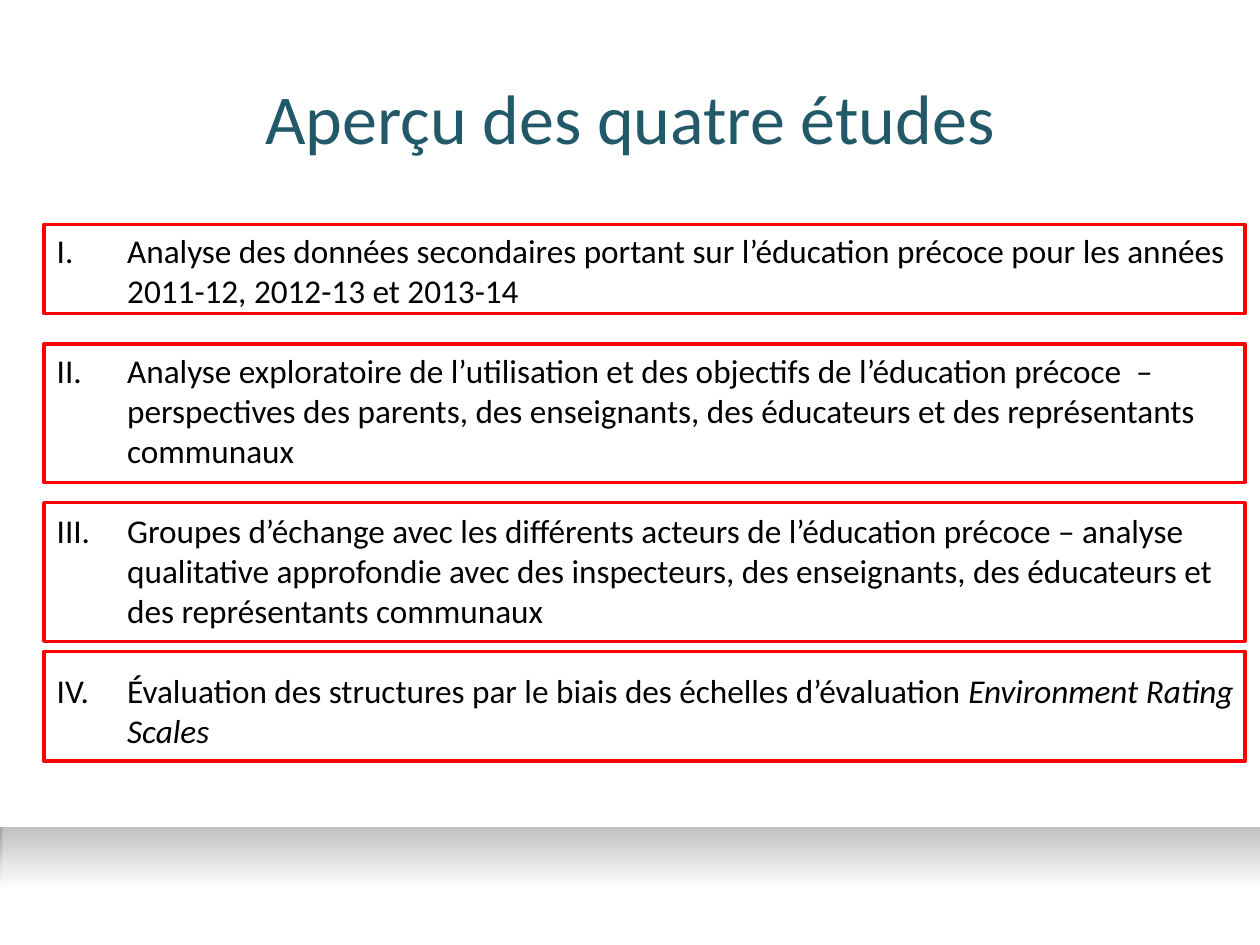
from lxml import etree
from pptx import Presentation
from pptx.dml.color import RGBColor
from pptx.enum.shapes import MSO_SHAPE
from pptx.enum.text import MSO_ANCHOR, MSO_AUTO_SIZE, PP_ALIGN
from pptx.oxml.ns import qn
from pptx.util import Inches, Pt

RECTANGLE = MSO_SHAPE.RECTANGLE
MIDDLE, TOP = MSO_ANCHOR.MIDDLE, MSO_ANCHOR.TOP
CENTER, LEFT = PP_ALIGN.CENTER, PP_ALIGN.LEFT
NO_AUTOFIT = MSO_AUTO_SIZE.NONE

# Each study: plain text, italic ending, top and height of its frame
STUDIES = [
    ("Analyse des données secondaires portant sur l’éducation précoce pour les "
     "années 2011-12, 2012-13 et 2013-14", "", 1.78, 0.71),
    ("Analyse exploratoire de l’utilisation et des objectifs de l’éducation "
     "précoce \u00a0– perspectives des parents, des enseignants, des éducateurs "
     "et des représentants communaux", "", 2.73, 1.1),
    ("Groupes d’échange avec les différents acteurs de l’éducation précoce – "
     "analyse qualitative approfondie avec des inspecteurs, des enseignants, des "
     "éducateurs et des représentants communaux", "", 3.99, 1.1),
    ("Évaluation des structures par le biais des échelles d’évaluation ",
     "Environment Rating Scales", 5.17, 0.87),
]


def color(hex_code):
    return RGBColor.from_string(hex_code)


def add_rectangle(left, top, width, height):
    """Add a rectangle without shadow."""
    rectangle = slide.shapes.add_shape(
        RECTANGLE, Inches(left), Inches(top), Inches(width), Inches(height))
    rectangle.shadow.inherit = False
    return rectangle


prs = Presentation()
prs.slide_width, prs.slide_height = Inches(10), Inches(7.5)
slide = prs.slides.add_slide(prs.slide_layouts[1])

# Footer band: grey gradient under a translucent white veil
band = add_rectangle(0, 6.56, 10.02, 0.99)
band.line.fill.background()
band.fill.gradient()
band.fill.gradient_angle = 270
for stop, position, shade in zip(
        band.fill.gradient_stops, (0.03, 0.5), ("A6A6A6", "FFFFFF")):
    stop.position = position
    stop.color.rgb = color(shade)

veil = add_rectangle(0.02, 6.56, 10, 0.99)
veil.line.fill.background()
veil.fill.solid()
veil.fill.fore_color.rgb = color("FFFFFF")
veil_color = veil.fill._xPr.find(qn("a:solidFill"))[0]
etree.SubElement(veil_color, qn("a:alpha"), val="34000")

# Title
title = slide.shapes.title
title.left, title.top = Inches(0.5), Inches(0.3)
title.width, title.height = Inches(9), Inches(1.25)
title.text_frame.text = "Aperçu des quatre études"
title.text_frame.vertical_anchor = MIDDLE
heading = title.text_frame.paragraphs[0]
heading.alignment = CENTER
heading.runs[0].font.name = "Calibri"
heading.runs[0].font.size = Pt(40)
heading.runs[0].font.color.rgb = color("215968")

# Numbered list of studies
study_list = slide.placeholders[1]
study_list.left, study_list.top = Inches(0.35), Inches(1.78)
study_list.width, study_list.height = Inches(9.65), Inches(4.58)
list_frame = study_list.text_frame
list_frame.auto_size = NO_AUTOFIT
list_frame.vertical_anchor = TOP
for number, (description, instrument, top, height) in enumerate(STUDIES):
    item = list_frame.add_paragraph() if number else list_frame.paragraphs[0]
    item.text = description
    if instrument:
        item.add_run().text = instrument
        item.runs[-1].font.italic = True
    item.alignment = LEFT
    item.space_before = Pt(23 if number else 0)
    properties = item._p.get_or_add_pPr()
    properties.set("marL", str(Inches(0.56)))
    properties.set("indent", str(Inches(-0.56)))
    etree.SubElement(properties, qn("a:buFont"), typeface="+mj-lt")
    etree.SubElement(properties, qn("a:buAutoNum"), type="romanUcPeriod")
    for run in item.runs:
        run.font.name = "Calibri"
        run.font.size = Pt(19)
        run.font.color.rgb = color("000000")

    frame = add_rectangle(0.35, top, 9.53, height)
    frame.fill.background()
    frame.line.color.rgb = color("FF0000")
    frame.line.width = Pt(2)

prs.save("out.pptx")
